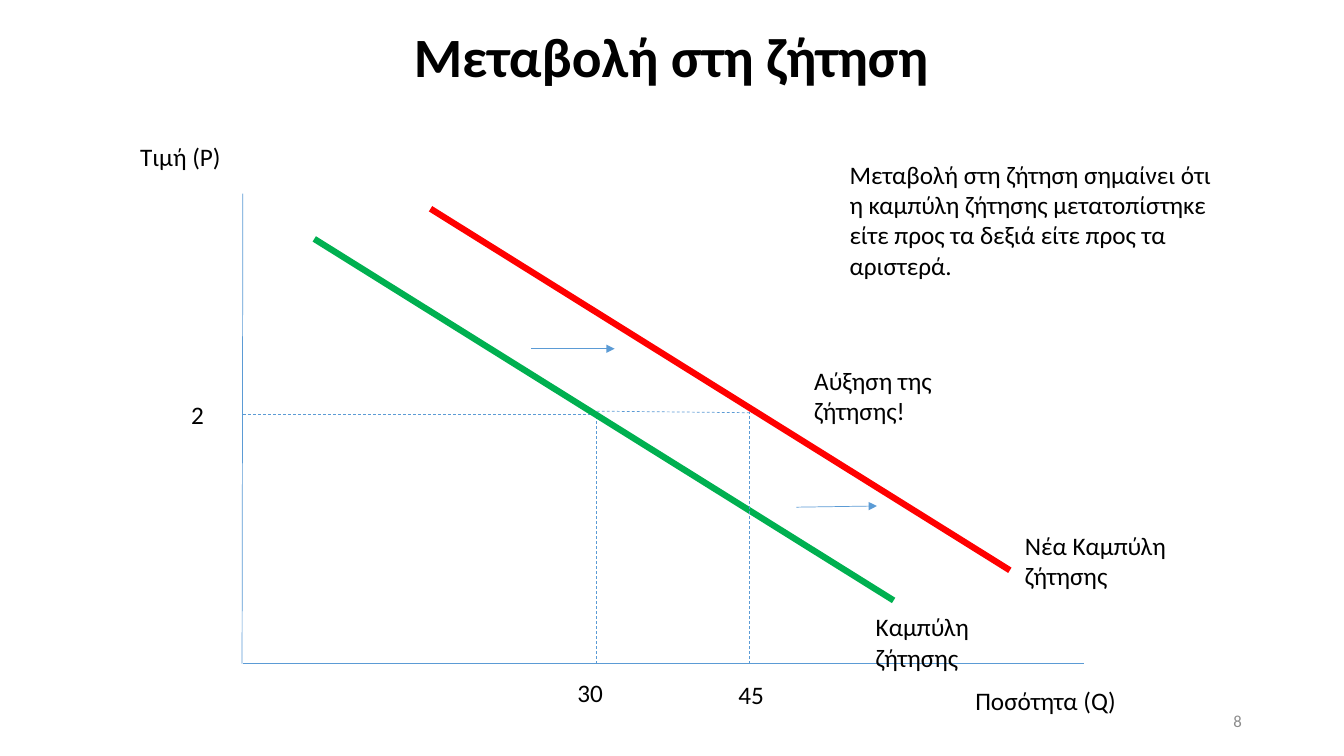
from dataclasses import dataclass

from lxml import etree
from pptx import Presentation
from pptx.dml.color import RGBColor
from pptx.enum.dml import MSO_LINE
from pptx.enum.shapes import MSO_CONNECTOR
from pptx.enum.text import MSO_ANCHOR, MSO_AUTO_SIZE, PP_ALIGN
from pptx.oxml.ns import qn
from pptx.util import Cm, Pt

STRAIGHT = MSO_CONNECTOR.STRAIGHT
DASH = MSO_LINE.DASH
MIDDLE, TOP = MSO_ANCHOR.MIDDLE, MSO_ANCHOR.TOP
LEFT, CENTER, RIGHT = PP_ALIGN.LEFT, PP_ALIGN.CENTER, PP_ALIGN.RIGHT
FIT_SHAPE, NO_FIT = MSO_AUTO_SIZE.SHAPE_TO_FIT_TEXT, MSO_AUTO_SIZE.NONE
TITLE_ONLY = 5


@dataclass(frozen=True)
class Theme:
    font: str = "Calibri"
    ink: str = "000000"
    muted: str = "8C8C8C"
    guide: str = "5B9BD5"
    demand: str = "00B050"
    new_demand: str = "FF0000"
    title_size: float = 39.6
    label_size: float = 18
    number_size: float = 12
    thin: float = 0.5
    thick: float = 4.5


class SlideBuilder:
    def __init__(self, slide, theme):
        self.slide = slide
        self.theme = theme

    def style(self, paragraph, size, color, align, bold=False):
        paragraph.alignment = align
        font = paragraph.font
        font.name = self.theme.font
        font.size = Pt(size)
        font.bold = bold
        font.color.rgb = RGBColor.from_string(color)

    def title(self, text, left, top, width, height):
        heading = self.slide.shapes.title
        heading.left, heading.top = Cm(left), Cm(top)
        heading.width, heading.height = Cm(width), Cm(height)
        frame = heading.text_frame
        frame.text = text
        frame.vertical_anchor = MIDDLE
        frame.auto_size = NO_FIT
        paragraph = frame.paragraphs[0]
        paragraph.line_spacing = 0.9
        self.style(paragraph, self.theme.title_size, self.theme.ink, CENTER, bold=True)

    def label(self, text, left, top, width, height, wrap=True):
        box = self.slide.shapes.add_textbox(Cm(left), Cm(top), Cm(width), Cm(height))
        frame = box.text_frame
        frame.text = text
        frame.word_wrap = wrap
        frame.auto_size = FIT_SHAPE
        frame.vertical_anchor = TOP
        self.style(frame.paragraphs[0], self.theme.label_size, self.theme.ink, LEFT)

    def page_number(self, text, left, top, width, height):
        box = self.slide.shapes.add_textbox(Cm(left), Cm(top), Cm(width), Cm(height))
        frame = box.text_frame
        frame.text = text
        frame.word_wrap = True
        frame.vertical_anchor = MIDDLE
        self.style(frame.paragraphs[0], self.theme.number_size, self.theme.muted, RIGHT)

    def line(self, start, end, color=None, weight=None, dashed=False, arrow=False):
        connector = self.slide.shapes.add_connector(
            STRAIGHT, *(Cm(value) for value in (*start, *end))
        )
        connector.line.color.rgb = RGBColor.from_string(color or self.theme.guide)
        connector.line.width = Pt(weight or self.theme.thin)
        if dashed:
            connector.line.dash_style = DASH
        if arrow:
            outline = connector.line._get_or_add_ln()
            etree.SubElement(outline, qn("a:tailEnd"), type="triangle")
        etree.SubElement(connector._element.spPr, qn("a:effectLst"))


def main():
    presentation = Presentation()
    presentation.slide_width, presentation.slide_height = Cm(33.87), Cm(19.05)
    slide = presentation.slides.add_slide(presentation.slide_layouts[TITLE_ONLY])
    theme = Theme()
    builder = SlideBuilder(slide, theme)

    builder.title("Μεταβολή στη ζήτηση", 5.97, 0.64, 21.89, 1.73)
    builder.page_number("8", 23.93, 17.65, 7.62, 1.02)

    axis_x, axis_y = 6.12, 16.72
    builder.line((axis_x, 4.88), (6.1, axis_y))
    builder.line((27.31, axis_y), (axis_x, axis_y))

    price, new_price = 10.44, 10.38
    quantity, new_quantity = 15.04, 18.89
    builder.line((axis_x, price), (quantity, price), dashed=True)
    builder.line((quantity, 10.36), (new_quantity, 10.4), dashed=True)

    curve_run, curve_drop = 14.6, 9.11
    curves = [
        (7.92, 6.02, quantity, theme.demand),
        (10.85, 5.26, new_quantity, theme.new_demand),
    ]
    for left, top, sold, color in curves:
        builder.line((sold, axis_y), (sold, new_price), dashed=True)
        builder.line((left, top), (left + curve_run, top + curve_drop), color, theme.thick)

    builder.line((13.39, 8.79), (15.49, 8.79), arrow=True)
    builder.line((20.07, 12.78), (22.1, 12.75), arrow=True)

    one_line, two_lines = 1.02, 1.8
    builder.label("Τιμή (P)", 3.28, 3.43, 2.84, one_line)
    builder.label("Ποσότητα (Q)", 24.33, 17.15, 4.42, one_line)
    builder.label(
        "Μεταβολή στη ζήτηση σημαίνει ότι η καμπύλη ζήτησης μετατοπίστηκε "
        "είτε προς τα δεξιά είτε προς τα αριστερά.",
        21.16, 3.89, 9.96, 3.33,
    )
    builder.label("Καμπύλη ζήτησης", 21.82, 15.29, 3.15, two_lines)
    builder.label("Νέα Καμπύλη ζήτησης", 25.58, 13.23, 4.6, two_lines)
    builder.label("Αύξηση της ζήτησης!", 20.27, 9.07, 4.6, two_lines)
    builder.label("2", 4.57, 9.93, 0.84, one_line, wrap=False)
    builder.label("30", 14.3, 16.94, 1.17, one_line, wrap=False)
    builder.label("45", 18.36, 16.99, 1.17, one_line, wrap=False)

    presentation.save("out.pptx")


if __name__ == "__main__":
    main()
